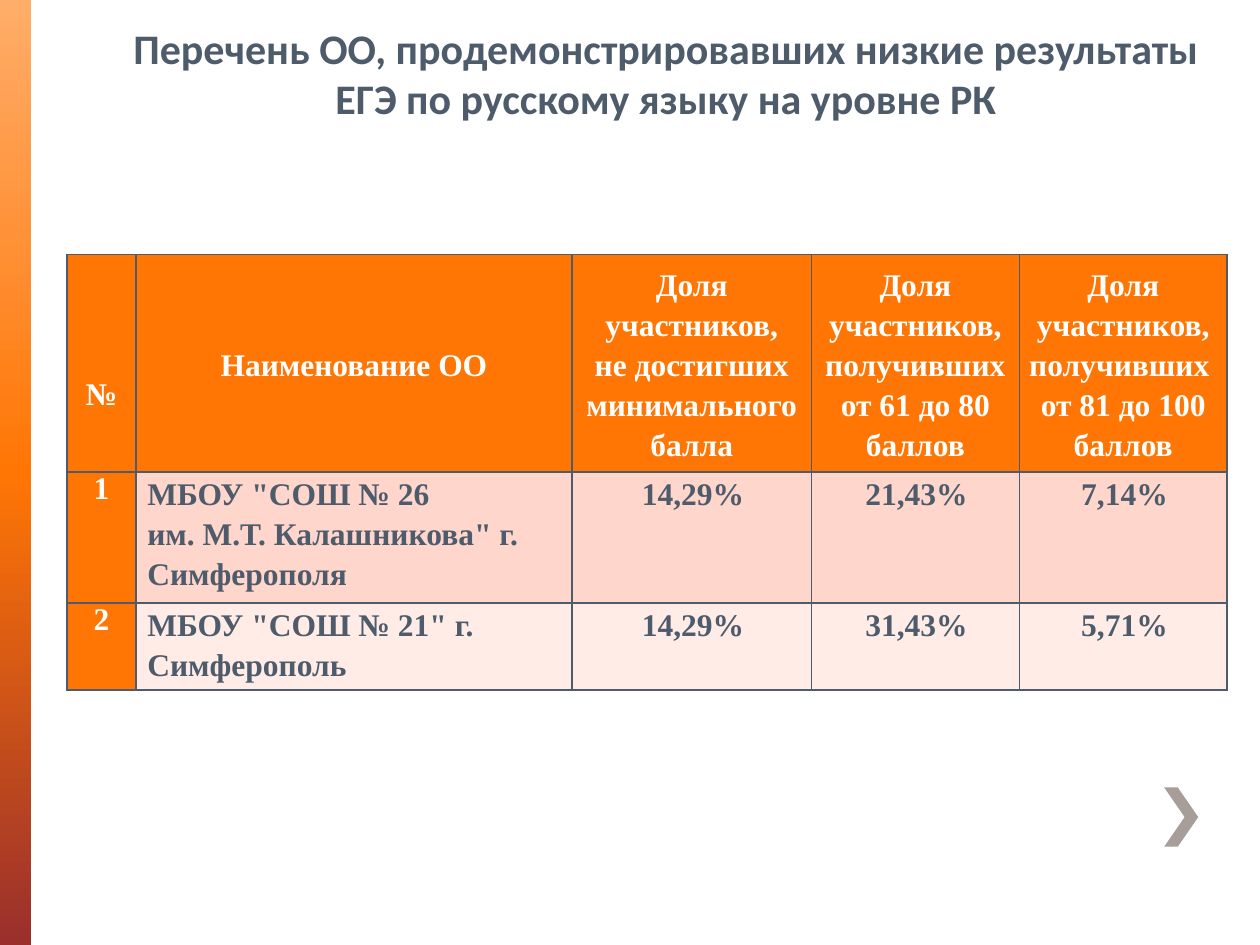
from copy import deepcopy
from dataclasses import dataclass

from lxml.etree import SubElement
from pptx import Presentation
from pptx.dml.color import RGBColor as Rgb
from pptx.enum.text import MSO_ANCHOR as Anchor, PP_ALIGN as Align
from pptx.oxml import parse_xml
from pptx.oxml.ns import nsdecls, qn
from pptx.util import Inches, Pt


@dataclass(frozen=True)
class Theme:
    """Colours, fonts and type sizes of the slide."""
    slate: str = "4D5B6B"
    orange: str = "FF7605"
    white: str = "FFFFFF"
    chevron: str = "A79D99"
    band: tuple = ("FFD6CC", "FFECE7")
    gradient: tuple = ((0, "FFAD69"), (0.5, "FF7605"), (1, "9A2F2C"))
    title_font: str = "Calibri"
    table_font: str = "Times New Roman"
    title_size: int = 24
    table_size: int = 18


THEME = Theme()
TITLE = "Перечень ОО, продемонстрировавших низкие результаты ЕГЭ по русскому языку на уровне РК"
COLUMN_WIDTHS = (0.55, 3.46, 1.9, 1.65, 1.65)
ROW_HEIGHTS = (1.72, 1.04, 0.69)
ROWS = (
    ("№", "Наименование ОО",
     "Доля участников,\nне достигших минимального балла",
     "Доля участников, получивших от 61 до 80 баллов",
     "Доля участников, получивших \nот 81 до 100 баллов"),
    ("1", 'МБОУ "СОШ № 26 \nим. М.Т. Калашникова" г. Симферополя',
     "14,29%", "21,43%", "7,14%"),
    ("2", 'МБОУ "СОШ № 21" г. Симферополь',
     "14,29%", "31,43%", "5,71%"),
)


def write(text_frame, text, font, size, color, align, spacing=1.0):
    """Put one bold paragraph into a text frame."""
    paragraph = text_frame.paragraphs[0]
    paragraph.text = text
    paragraph.alignment = align
    paragraph.line_spacing = spacing
    for run in paragraph.runs:
        run.font.name = font
        run.font.size = Pt(size)
        run.font.bold = True
        run.font.color.rgb = Rgb.from_string(color)


def add_side_bar(slide, left, top, width, height):
    """Draw the vertical gradient bar."""
    bar = slide.shapes.add_shape(1, Inches(left), Inches(top), Inches(width), Inches(height))
    bar.shadow.inherit = False
    bar.line.fill.background()
    bar.fill.gradient()
    bar.fill.gradient_angle = 270
    stop_list = bar._element.spPr.find(".//" + qn("a:gsLst"))
    stop_list.insert(1, deepcopy(stop_list[0]))
    for stop, (position, color) in zip(bar.fill.gradient_stops, THEME.gradient):
        stop.position = position
        stop.color.rgb = Rgb.from_string(color)


def add_chevron(slide, left, top, width, height):
    """Draw the chevron that points to the next slide."""
    arm = 0.4 * width
    points = ((arm, 0), (width, height / 2), (arm, height), (0, height), (width - arm, height / 2))
    builder = slide.shapes.build_freeform(Inches(left), Inches(top))
    builder.add_line_segments([(Inches(left + x), Inches(top + y)) for x, y in points], close=True)
    chevron = builder.convert_to_shape()
    chevron.shadow.inherit = False
    chevron.fill.solid()
    chevron.fill.fore_color.rgb = Rgb.from_string(THEME.chevron)
    chevron.line.fill.background()


def add_title(slide, left, top, width, height):
    """Place the centred title."""
    box = slide.shapes.add_textbox(Inches(left), Inches(top), Inches(width), Inches(height))
    box.text_frame.word_wrap = True
    box.text_frame.margin_left = Inches(0.6)
    write(box.text_frame, TITLE, THEME.title_font, THEME.title_size, THEME.slate, Align.CENTER)


def add_borders(cell):
    """Outline a cell on all four sides."""
    properties = cell._tc.get_or_add_tcPr()
    for index, side in enumerate(("lnL", "lnR", "lnT", "lnB")):
        line = parse_xml(f'<a:{side} {nsdecls("a")} w="{Pt(1)}"/>')
        fill = SubElement(line, qn("a:solidFill"))
        SubElement(fill, qn("a:srgbClr"), val=THEME.slate)
        properties.insert(index, line)


def format_cell(cell, text, row, column):
    """Fill, outline and write one cell according to its place."""
    header = row == 0
    orange = header or column == 0
    cell.fill.solid()
    cell.fill.fore_color.rgb = Rgb.from_string(THEME.orange if orange else THEME.band[row - 1])
    add_borders(cell)
    cell.vertical_anchor = Anchor.MIDDLE if header else Anchor.TOP
    cell.margin_left = Inches(0.07 if orange else 0.09)
    cell.margin_right = Inches(0.07)
    cell.margin_top = Inches(0.46 if header and column == 0 else 0)
    cell.margin_bottom = 0
    write(cell.text_frame, text, THEME.table_font, THEME.table_size,
          THEME.white if orange else THEME.slate,
          Align.LEFT if column == 1 and not header else Align.CENTER,
          1.0 if column == 0 and not header else 1.15)


def add_results_table(slide, left, top, width, height):
    """Place the table of schools and their results."""
    frame = slide.shapes.add_table(len(ROWS), len(COLUMN_WIDTHS),
                                   Inches(left), Inches(top), Inches(width), Inches(height))
    table = frame.table
    for column, column_width in zip(table.columns, COLUMN_WIDTHS):
        column.width = Inches(column_width)
    for row, row_height in zip(table.rows, ROW_HEIGHTS):
        row.height = Inches(row_height)
    for row, texts in enumerate(ROWS):
        for column, text in enumerate(texts):
            format_cell(table.cell(row, column), text, row, column)


def main():
    """Build and save the slide."""
    presentation = Presentation()
    presentation.slide_width = Inches(10)
    presentation.slide_height = Inches(7.5)
    slide = presentation.slides.add_slide(presentation.slide_layouts[6])
    add_side_bar(slide, 0, 0, 0.25, 7.5)
    add_chevron(slide, 9.24, 6.25, 0.27, 0.47)
    add_title(slide, 0.35, 0.13, 9.37, 0.91)
    add_results_table(slide, 0.53, 2.02, sum(COLUMN_WIDTHS), sum(ROW_HEIGHTS))
    presentation.save("out.pptx")


if __name__ == "__main__":
    main()
